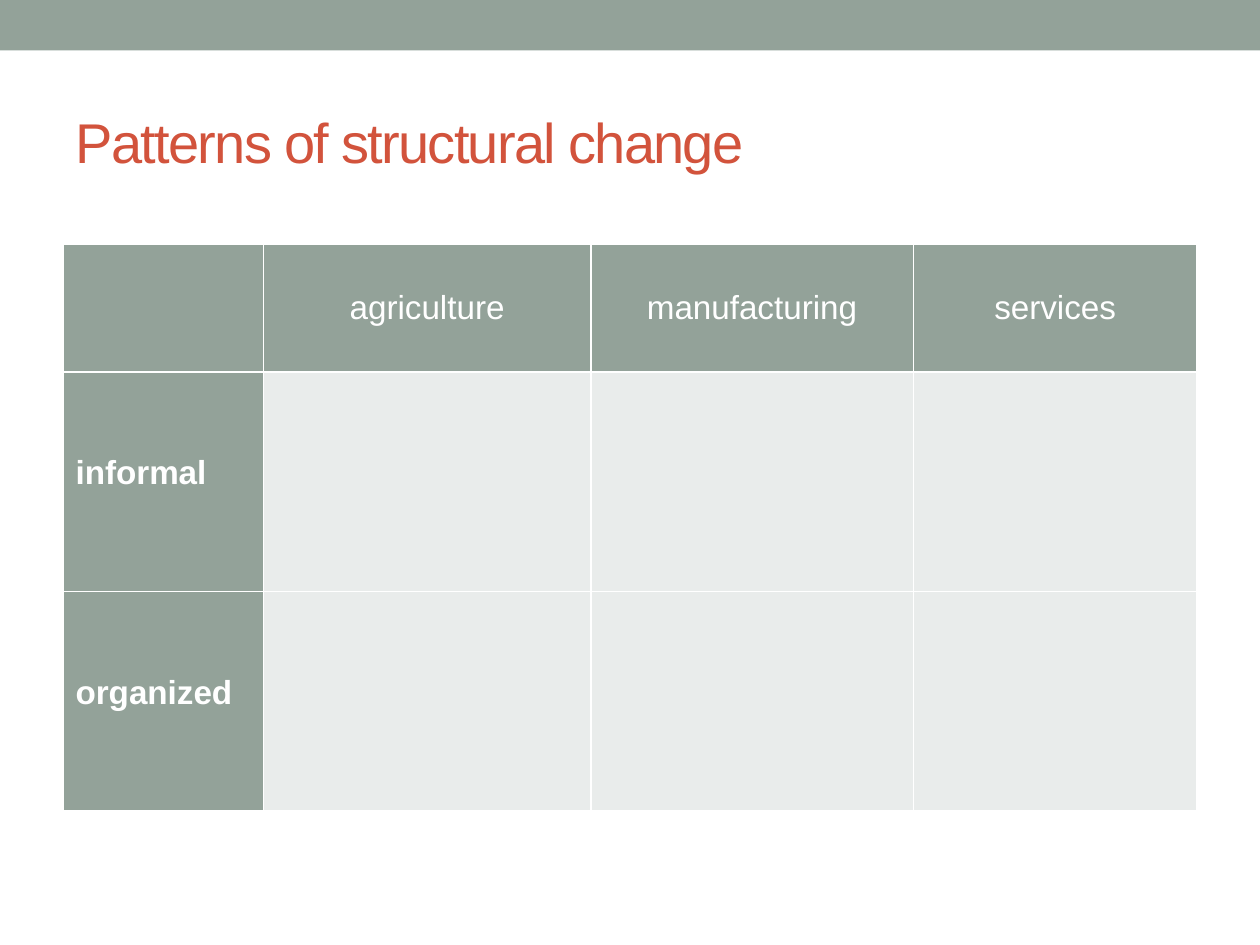
import dataclasses

import lxml.etree
import pptx
import pptx.dml.color
import pptx.enum.shapes
import pptx.enum.text
import pptx.oxml.ns
import pptx.util

Cm = pptx.util.Cm
Pt = pptx.util.Pt
RGB = pptx.dml.color.RGBColor
Align = pptx.enum.text.PP_ALIGN


@dataclasses.dataclass(frozen=True)
class Theme:
    """Colours, font and type sizes of the deck."""
    sage: RGB = RGB(0x93, 0xA2, 0x99)
    pale: RGB = RGB(0xE9, 0xEC, 0xEB)
    rust: RGB = RGB(0xD2, 0x53, 0x3C)
    white: RGB = RGB(0xFF, 0xFF, 0xFF)
    font: str = "Arial"
    title_size: int = 32
    table_size: int = 19
    rule_width: int = 1


THEME = Theme()
SECTORS = ["agriculture", "manufacturing", "services"]
FORMS = ["informal", "organized"]
COLUMN_WIDTHS = [4.04, 6.6, 6.5, 5.72]
ROW_HEIGHTS = [2.57, 4.42, 4.42]
HEADER_INSET, FORM_INSET = 0.9, 1.67


def style_font(font, size, color, bold=False):
    """Apply the theme font with a size, colour and weight."""
    font.name = THEME.font
    font.size = Pt(size)
    font.color.rgb = color
    font.bold = bold


def add_band(page, left, top, width, height):
    """Draw the plain band along the top edge."""
    band = page.shapes.add_shape(
        pptx.enum.shapes.MSO_SHAPE.RECTANGLE, Cm(left), Cm(top), Cm(width), Cm(height))
    band.shadow.inherit = False
    band.fill.solid()
    band.fill.fore_color.rgb = THEME.sage
    band.line.fill.background()


def place_title(page, text, left, top, width, height):
    """Move, fill and format the title placeholder."""
    title = page.shapes.title
    title.left, title.top, title.width, title.height = map(Cm, (left, top, width, height))
    frame = title.text_frame
    frame.word_wrap = True
    frame.auto_size = pptx.enum.text.MSO_AUTO_SIZE.NONE
    frame.vertical_anchor = pptx.enum.text.MSO_ANCHOR.MIDDLE
    para = frame.paragraphs[0]
    para.alignment = Align.LEFT
    style_font(para.font, THEME.title_size, THEME.rust)
    span = para.add_run()
    span.text = text
    span._r.get_or_add_rPr().set("spc", "-100")


def style_cell(cell, color):
    """Give a cell white rules on every side and a solid fill."""
    properties = cell._tc.get_or_add_tcPr()
    qn = pptx.oxml.ns.qn
    for side in ("a:lnL", "a:lnR", "a:lnT", "a:lnB"):
        rule = lxml.etree.SubElement(properties, qn(side), w=str(Pt(THEME.rule_width)))
        paint = lxml.etree.SubElement(rule, qn("a:solidFill"))
        lxml.etree.SubElement(paint, qn("a:srgbClr"), val=str(THEME.white))
    cell.fill.solid()
    cell.fill.fore_color.rgb = color


def write_label(cell, text, inset, alignment, bold):
    """Write a heading in a cell at a set distance from its top."""
    cell.margin_top = Cm(inset)
    para = cell.text_frame.paragraphs[0]
    para.text = text
    para.alignment = alignment
    style_font(para.font, THEME.table_size, THEME.white, bold)


def add_matrix(page, left, top):
    """Build the grid of sectors against forms of work."""
    table = page.shapes.add_table(
        len(ROW_HEIGHTS), len(COLUMN_WIDTHS), Cm(left), Cm(top),
        Cm(sum(COLUMN_WIDTHS)), Cm(sum(ROW_HEIGHTS))).table
    for column, width in zip(table.columns, COLUMN_WIDTHS):
        column.width = Cm(width)
    for row, height in zip(table.rows, ROW_HEIGHTS):
        row.height = Cm(height)
    for r in range(len(ROW_HEIGHTS)):
        for c in range(len(COLUMN_WIDTHS)):
            style_cell(table.cell(r, c), THEME.pale if r and c else THEME.sage)
    for c, sector in enumerate(SECTORS, 1):
        write_label(table.cell(0, c), sector, HEADER_INSET, Align.CENTER, False)
    for r, form in enumerate(FORMS, 1):
        write_label(table.cell(r, 0), form, FORM_INSET, Align.LEFT, True)


def main():
    """Build and save the deck."""
    deck = pptx.Presentation()
    deck.slide_width, deck.slide_height = Cm(25.4), Cm(19.05)
    page = deck.slides.add_slide(deck.slide_layouts.get_by_name("Title Only"))
    add_band(page, 0, 0, 25.4, 1.02)
    place_title(page, "Patterns of structural change", 1.27, 1.47, 22.86, 2.74)
    add_matrix(page, 1.27, 4.93)
    deck.save("out.pptx")


if __name__ == "__main__":
    main()
